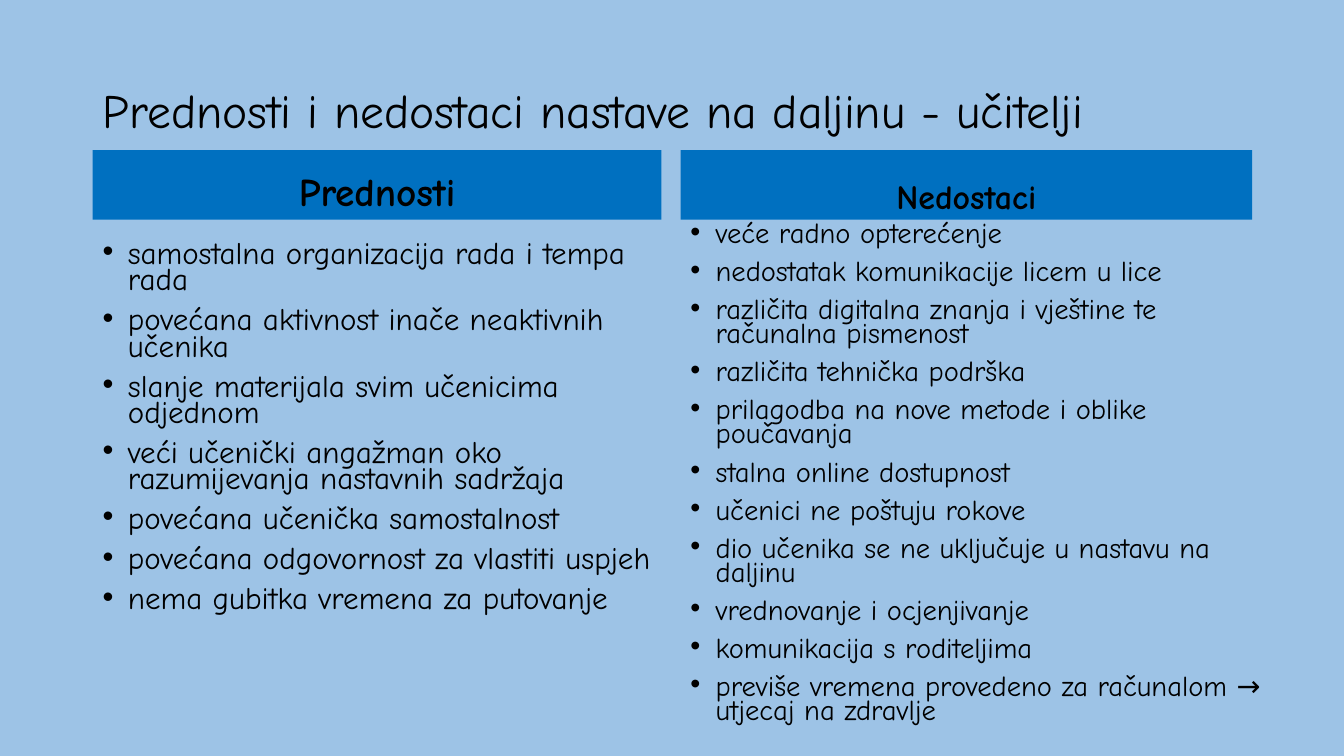
"""Builds a slide comparing pros and cons of remote teaching for teachers."""
from lxml import etree
from pptx import Presentation
from pptx import util as u
from pptx.dml.color import RGBColor
from pptx.enum import shapes, text
from pptx.oxml.ns import qn

FONT = "Comic Neue"
BACKGROUND, BAR, INK = "9DC3E6", "0070C0", "000000"
INDENT = 0.25
TITLE = "Prednosti i nedostaci nastave na daljinu - učitelji"
TITLE_BOX = (0.92, 0.4, 11.5, 1.45)
COLUMNS = [
    {
        "heading": "Prednosti", "heading_box": (0.92, 1.49, 5.64, 0.69),
        "heading_size": 28, "heading_spacing": 0.9,
        "list_box": (0.92, 2.37, 5.64, 4.4), "list_size": 22.2,
        "points": [
            "samostalna organizacija rada i tempa rada",
            "povećana aktivnost inače neaktivnih učenika",
            "slanje materijala svim učenicima odjednom",
            "veći učenički angažman oko razumijevanja nastavnih sadržaja",
            "povećana učenička samostalnost",
            "povećana odgovornost za vlastiti uspjeh",
            "nema gubitka vremena za putovanje",
        ],
    },
    {
        "heading": "Nedostaci", "heading_box": (6.75, 1.49, 5.67, 0.69),
        "heading_size": 24.2, "heading_spacing": 0.7,
        "list_box": (6.75, 2.18, 6.04, 5.32), "list_size": 20.4,
        "points": [
            "veće radno opterećenje",
            "nedostatak komunikacije licem u lice",
            "različita digitalna znanja i vještine te računalna pismenost",
            "različita tehnička podrška",
            "prilagodba na nove metode i oblike poučavanja",
            "stalna online dostupnost",
            "učenici ne poštuju rokove",
            "dio učenika se ne uključuje u nastavu na daljinu",
            "vrednovanje i ocjenjivanje",
            "komunikacija s roditeljima",
            "previše vremena provedeno za računalom → utjecaj na zdravlje",
        ],
    },
]


def paint(fill, color):
    fill.solid()
    fill.fore_color.rgb = RGBColor.from_string(color)


def write(shape, lines, size, spacing, anchor, before=10, bold=False,
          align=text.PP_ALIGN.LEFT):
    frame = shape.text_frame
    frame.word_wrap = True
    frame.vertical_anchor = anchor
    frame.text = "\n".join(lines)
    for paragraph in frame.paragraphs:
        paragraph.alignment = align
        paragraph.line_spacing = spacing
        paragraph.space_before = u.Pt(before)
        for run in paragraph.runs:
            run.font.name = FONT
            run.font.size = u.Pt(size)
            run.font.bold = bold
            paint(run.font.fill, INK)


def add_bullets(shape):
    for paragraph in shape.text_frame.paragraphs:
        properties = paragraph._p.get_or_add_pPr()
        properties.set("marL", str(u.Inches(INDENT)))
        properties.set("indent", str(u.Inches(-INDENT)))
        etree.SubElement(properties, qn("a:buFont")).set("typeface", "Arial")
        etree.SubElement(properties, qn("a:buChar")).set("char", "•")


def add_column(slide, column):
    bar = slide.shapes.add_shape(
        shapes.MSO_SHAPE.RECTANGLE, *map(u.Inches, column["heading_box"]))
    bar.shadow.inherit = False
    paint(bar.fill, BAR)
    bar.line.fill.background()
    write(bar, [column["heading"]], column["heading_size"],
          column["heading_spacing"], text.MSO_ANCHOR.BOTTOM, bold=True,
          align=text.PP_ALIGN.CENTER)

    points = slide.shapes.add_textbox(*map(u.Inches, column["list_box"]))
    write(points, column["points"], column["list_size"], 0.7,
          text.MSO_ANCHOR.TOP)
    add_bullets(points)


def main():
    presentation = Presentation()
    presentation.slide_width = u.Inches(13.33)
    presentation.slide_height = u.Inches(7.5)
    slide = presentation.slides.add_slide(presentation.slide_layouts[6])
    paint(slide.background.fill, BACKGROUND)
    title = slide.shapes.add_textbox(*map(u.Inches, TITLE_BOX))
    write(title, [TITLE], 34, 0.9, text.MSO_ANCHOR.MIDDLE, before=0)
    for column in COLUMNS:
        add_column(slide, column)
    presentation.save("out.pptx")


if __name__ == "__main__":
    main()
